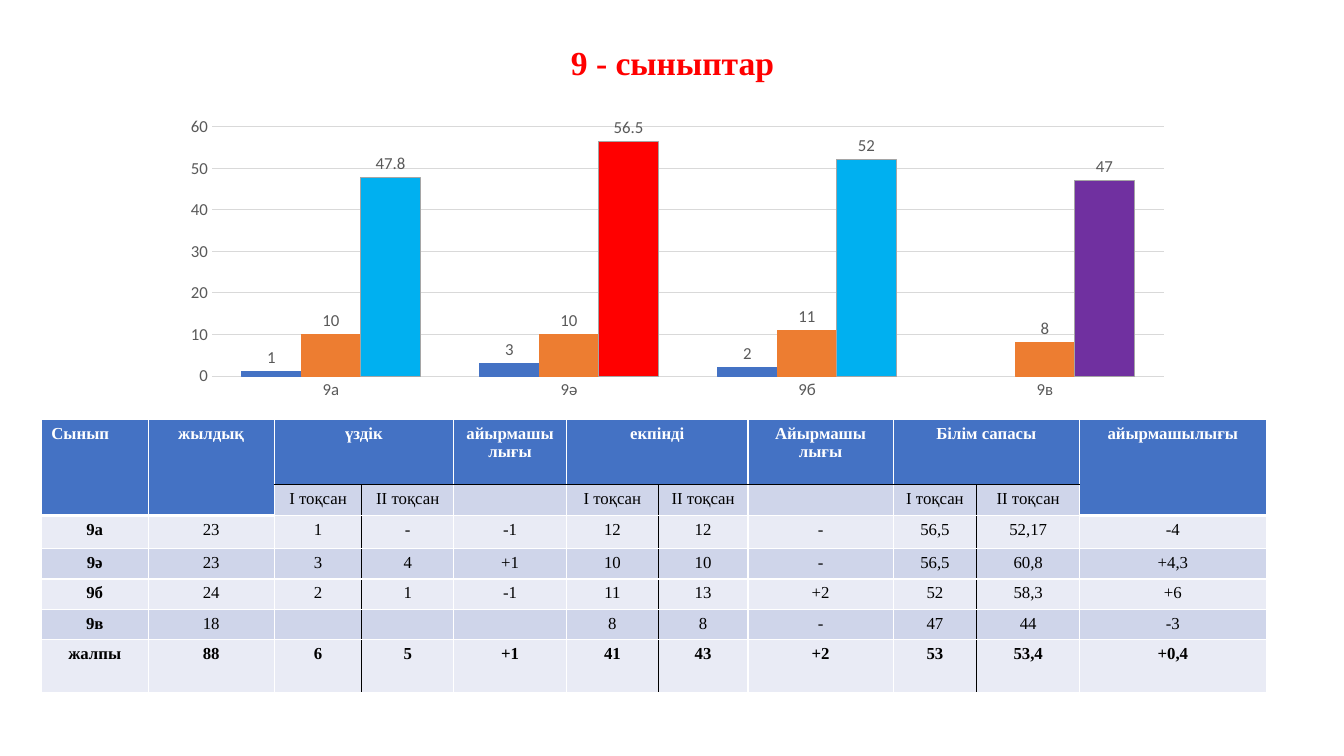
from dataclasses import dataclass, field

from lxml.etree import SubElement
from pptx import Presentation
from pptx.chart.data import CategoryChartData
from pptx.dml.color import RGBColor
from pptx.enum.chart import XL_CHART_TYPE, XL_LABEL_POSITION, XL_TICK_MARK
from pptx.enum.text import MSO_ANCHOR, MSO_AUTO_SIZE, PP_ALIGN
from pptx.oxml import parse_xml
from pptx.oxml.ns import nsdecls, qn
from pptx.util import Emu, Pt

PX = 9144  # 100 px to the inch

WHITE = RGBColor(0xFF, 0xFF, 0xFF)
BLACK = RGBColor(0x00, 0x00, 0x00)
RED = RGBColor(0xFF, 0x00, 0x00)
BLUE = RGBColor(0x44, 0x72, 0xC4)
ORANGE = RGBColor(0xED, 0x7D, 0x31)
SKY = RGBColor(0x00, 0xB0, 0xF0)
PURPLE = RGBColor(0x70, 0x30, 0xA0)
OUTLINE_GREY = RGBColor(0xA5, 0xA5, 0xA5)
GRID_GREY = RGBColor(0xD9, 0xD9, 0xD9)
LABEL_GREY = RGBColor(0x59, 0x59, 0x59)
BAND_DARK = RGBColor(0xCF, 0xD5, 0xEA)
BAND_LIGHT = RGBColor(0xE9, 0xEB, 0xF5)


@dataclass(frozen=True)
class Bars:
    name: str
    values: tuple
    color: RGBColor
    outline: RGBColor
    highlights: dict = field(default_factory=dict)


@dataclass(frozen=True)
class Edge:
    color: RGBColor = WHITE
    width: int = 1


CLASSES = ("9а", "9ә", "9б", "9в")
BARS = (
    Bars("Series 1", (1, 3, 2, None), BLUE, BLUE),
    Bars("Series 2", (10, 10, 11, 8), ORANGE, ORANGE),
    Bars("Series 3", (47.8, 56.5, 52, 47), SKY, OUTLINE_GREY, {1: RED, 3: PURPLE}),
)
PLOT = {"x": 0.084, "y": 0.121, "w": 0.86, "h": 0.793}

COLUMN_WIDTHS = (106, 125, 87, 91, 112, 91, 89, 144, 83, 102, 185)
ROW_HEIGHTS = (65, 30, 33, 30, 30, 30, 52)
TERMS = ("І тоқсан", "ІІ тоқсан", "")
GRADES = (
    ("Сынып", "жылдық", "үздік", "", "айырмашылығы", "екпінді", "",
     "Айырмашы\nлығы", "Білім сапасы", "", "айырмашылығы"),
    ("", "", *TERMS, *TERMS, *TERMS),
    ("9а", "23", "1", "-", "-1", "12", "12", "-", "56,5", "52,17", "-4"),
    ("9ә", "23", "3", "4", "+1", "10", "10", "-", "56,5", "60,8", "+4,3"),
    ("9б", "24", "2", "1", "-1", "11", "13", "+2", "52", "58,3", "+6"),
    ("9в", "18", "", "", "", "8", "8", "-", "47", "44", "-3"),
    ("жалпы", "88", "6", "5", "+1", "41", "43", "+2", "53", "53,4", "+0,4"),
)
TOTAL_ROW = len(GRADES) - 1
TERM_PAIRS = (2, 5, 8)  # first column of each pair of terms
TALL_HEADINGS = (0, 1, 10)  # headings two rows high


def px(*lengths: int) -> list[Emu]:
    return [Emu(length * PX) for length in lengths]


def write(frame, text: str, *, size: int = 12, color: RGBColor = BLACK,
          bold: bool = False, align=PP_ALIGN.CENTER, spacing: float = 1.0) -> None:
    frame.text = text
    for paragraph in frame.paragraphs:
        paragraph.alignment = align
        paragraph.line_spacing = spacing
        for run in paragraph.runs:
            run.font.name = "Times New Roman"
            run.font.size = Pt(size)
            run.font.bold = bold
            run.font.color.rgb = color
        if not paragraph.runs:  # keeps empty cells as low as filled ones
            SubElement(paragraph._p, qn("a:endParaRPr"), sz=str(size * 100))


def style_labels(font) -> None:
    font.name = "Calibri"
    font.size = Pt(12)
    font.color.rgb = LABEL_GREY


def paint(shape_format, fill: RGBColor, outline: RGBColor) -> None:
    shape_format.fill.solid()
    shape_format.fill.fore_color.rgb = fill
    shape_format.line.color.rgb = outline
    shape_format.line.width = Pt(0.75)


def add_title(slide) -> None:
    title = slide.shapes.title
    title.left, title.top, title.width, title.height = px(92, 40, 1150, 48)
    frame = title.text_frame
    frame.auto_size = MSO_AUTO_SIZE.NONE
    frame.vertical_anchor = MSO_ANCHOR.MIDDLE
    write(frame, "9 - сыныптар", size=24, color=RED, bold=True, spacing=0.9)


def add_grade_chart(slide) -> None:
    data = CategoryChartData()
    data.categories = CLASSES
    for bars in BARS:
        data.add_series(bars.name, bars.values)
    chart = slide.shapes.add_chart(
        XL_CHART_TYPE.COLUMN_CLUSTERED, *px(118, 88, 1098, 312), data).chart
    chart.has_title = chart.has_legend = False
    chart.font.name = "Calibri"
    chart.font.size = Pt(10)

    # Axes
    for axis in (chart.category_axis, chart.value_axis):
        axis.major_tick_mark = axis.minor_tick_mark = XL_TICK_MARK.NONE
        style_labels(axis.tick_labels.font)
    scale = chart.value_axis
    scale.minimum_scale, scale.maximum_scale, scale.major_unit = 0, 60, 10
    scale.format.line.fill.background()
    for line in (chart.category_axis.format.line, scale.major_gridlines.format.line):
        line.color.rgb = GRID_GREY
        line.width = Pt(0.75)

    # Columns and their labels
    plot = chart.plots[0]
    plot.gap_width, plot.overlap = 100, 0
    plot.vary_by_categories = False
    for bars, series in zip(BARS, plot.series):
        paint(series.format, bars.color, bars.outline)
        for index, color in bars.highlights.items():
            paint(series.points[index].format, color, bars.outline)
        labels = series.data_labels
        labels.show_value = True
        labels.position = XL_LABEL_POSITION.OUTSIDE_END
        style_labels(labels.font)

    # Plot area inside the chart
    area = chart.element.find(".//" + qn("c:plotArea"))
    for automatic in area.findall(qn("c:layout")):
        area.remove(automatic)
    modes = '<c:xMode val="edge"/><c:yMode val="edge"/>'
    sizes = "".join(f'<c:{key} val="{share}"/>' for key, share in PLOT.items())
    area.insert(0, parse_xml(
        f'<c:layout {nsdecls("c")}><c:manualLayout><c:layoutTarget val="inner"/>'
        f"{modes}{sizes}</c:manualLayout></c:layout>"))


def cell_edges(row: int, column: int) -> dict[str, Edge]:
    edges = {side: Edge() for side in ("lnL", "lnR", "lnT", "lnB")}
    if column in TALL_HEADINGS:
        if row < 2:
            edges["lnB"] = Edge(width=3)
        return edges
    if row == 0:
        edges["lnB"] = Edge(BLACK)
        return edges
    if row == 1:
        edges["lnT"] = Edge(BLACK)
    if column in TERM_PAIRS:
        edges["lnR"] = Edge(BLACK)
    if column - 1 in TERM_PAIRS:
        edges["lnL"] = Edge(BLACK)
    return edges


def format_cell(cell, row: int, column: int) -> None:
    heading = row == 0 or (row == 1 and column in TALL_HEADINGS)
    write(cell.text_frame, GRADES[row][column],
          color=WHITE if heading else BLACK,
          bold=heading or row == TOTAL_ROW or column == 0,
          align=PP_ALIGN.LEFT if row == column == 0 else PP_ALIGN.CENTER)
    properties = cell._tc.get_or_add_tcPr()
    for side, edge in cell_edges(row, column).items():
        line = SubElement(properties, qn(f"a:{side}"), w=str(Pt(edge.width)))
        SubElement(SubElement(line, qn("a:solidFill")), qn("a:srgbClr"), val=str(edge.color))
    cell.fill.solid()
    band = BAND_DARK if row % 2 else BAND_LIGHT
    cell.fill.fore_color.rgb = BLUE if heading else band


def add_grade_table(slide) -> None:
    table = slide.shapes.add_table(
        len(ROW_HEIGHTS), len(COLUMN_WIDTHS),
        *px(41, 416, sum(COLUMN_WIDTHS), sum(ROW_HEIGHTS))).table
    table.first_row = table.horz_banding = False
    for column, width in zip(table.columns, px(*COLUMN_WIDTHS)):
        column.width = width
    for row, height in zip(table.rows, px(*ROW_HEIGHTS)):
        row.height = height
    for row in range(len(ROW_HEIGHTS)):
        for column in range(len(COLUMN_WIDTHS)):
            format_cell(table.cell(row, column), row, column)
    for column in TALL_HEADINGS:
        table.cell(0, column).merge(table.cell(1, column))
    for column in TERM_PAIRS:
        table.cell(0, column).merge(table.cell(0, column + 1))


def main() -> None:
    deck = Presentation()
    deck.slide_width, deck.slide_height = px(1333, 750)
    slide = deck.slides.add_slide(deck.slide_layouts[5])
    add_title(slide)
    add_grade_chart(slide)
    add_grade_table(slide)
    deck.save("out.pptx")


if __name__ == "__main__":
    main()
